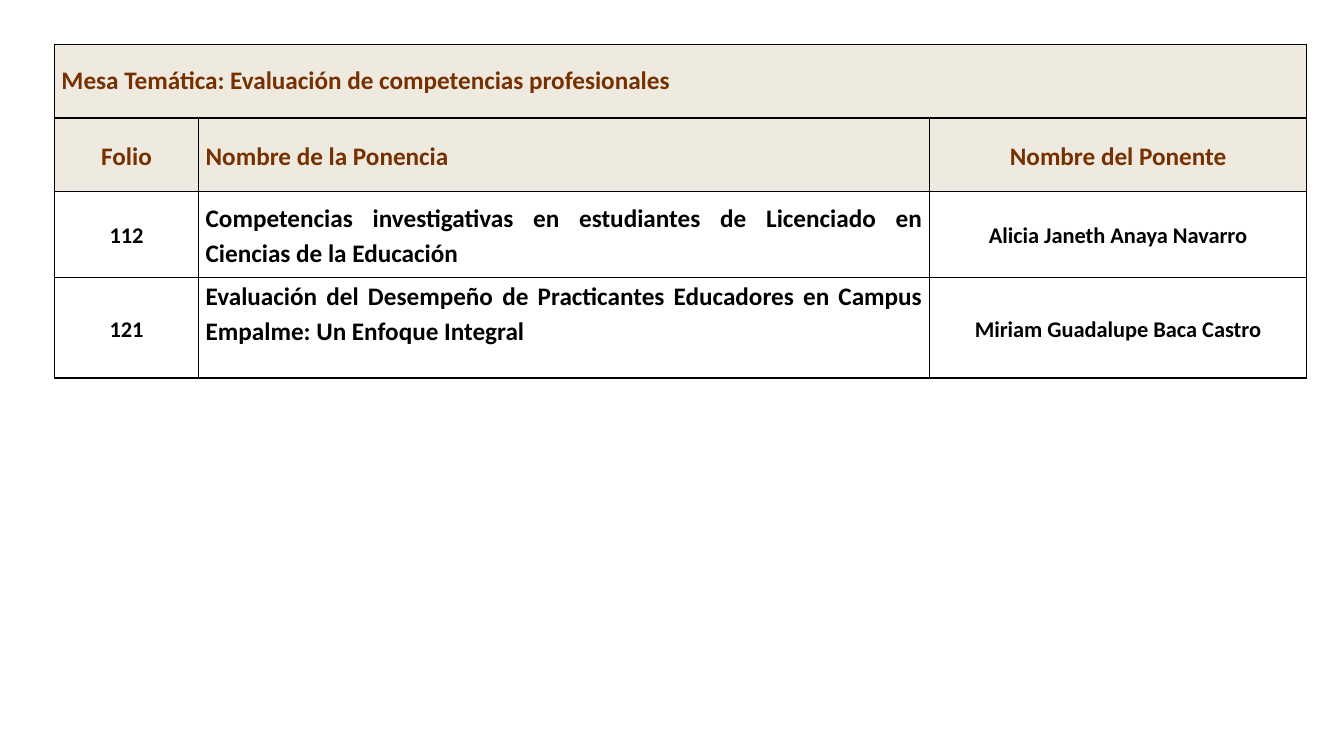
from dataclasses import dataclass

from lxml import etree
from pptx import Presentation
from pptx.dml.color import RGBColor
from pptx.enum.text import MSO_ANCHOR, PP_ALIGN
from pptx.oxml.ns import qn
from pptx.util import Inches, Pt

CENTER, JUSTIFY = PP_ALIGN.CENTER, PP_ALIGN.JUSTIFY
TOP, MIDDLE = MSO_ANCHOR.TOP, MSO_ANCHOR.MIDDLE


@dataclass(frozen=True)
class Theme:
    font: str = "Calibri"
    heading: str = "773000"
    body: str = "000000"
    header_fill: str = "EFEADF"
    border: str = "000000"
    border_width: int = 1
    large: int = 18
    small: int = 16


THEME = Theme()
COLUMN_WIDTHS = [1.43, 7.25, 3.74]
ROW_HEIGHTS = [0.73, 0.73, 0.85, 1.0]
ALIGNMENTS = [CENTER, JUSTIFY, CENTER]
ROWS = [
    ["Mesa Temática: Evaluación de competencias profesionales", "", ""],
    ["Folio", "Nombre de la Ponencia", "Nombre del Ponente"],
    ["112",
     "Competencias investigativas en estudiantes de Licenciado en Ciencias de la Educación",
     "Alicia Janeth Anaya Navarro"],
    ["121",
     "Evaluación del Desempeño de Practicantes Educadores en Campus Empalme: Un Enfoque Integral",
     "Miriam Guadalupe Baca Castro"],
]
HEADER_ROWS = 2
LAST_ROW = len(ROWS) - 1


def add_borders(cell):
    tc_pr = cell._tc.get_or_add_tcPr()
    for position, side in enumerate(("a:lnL", "a:lnR", "a:lnT", "a:lnB")):
        ln = etree.Element(qn(side), w=str(Pt(THEME.border_width)))
        fill = etree.SubElement(ln, qn("a:solidFill"))
        etree.SubElement(fill, qn("a:srgbClr"), val=THEME.border)
        tc_pr.insert(position, ln)


prs = Presentation()
prs.slide_width, prs.slide_height = Inches(13.33), Inches(7.5)
slide = prs.slides.add_slide(prs.slide_layouts[6])

table = slide.shapes.add_table(
    len(ROWS), len(COLUMN_WIDTHS), Inches(0.54), Inches(0.44),
    Inches(sum(COLUMN_WIDTHS)), Inches(sum(ROW_HEIGHTS))).table
for column, width in zip(table.columns, COLUMN_WIDTHS):
    column.width = Inches(width)
for row, height in zip(table.rows, ROW_HEIGHTS):
    row.height = Inches(height)
table.cell(0, 0).merge(table.cell(0, 2))

for i, texts in enumerate(ROWS):
    is_header = i < HEADER_ROWS
    for j, text in enumerate(texts):
        cell = table.cell(i, j)
        if is_header:
            cell.fill.solid()
            cell.fill.fore_color.rgb = RGBColor.from_string(THEME.header_fill)
        else:
            cell.fill.background()
        add_borders(cell)
        if cell.is_spanned:
            continue

        is_talk_title = j == 1 and not is_header
        cell.margin_left = cell.margin_right = Inches(0.07)
        cell.margin_top = cell.margin_bottom = 0
        cell.vertical_anchor = TOP if is_talk_title and i == LAST_ROW else MIDDLE
        p = cell.text_frame.paragraphs[0]
        p.text = text
        p.alignment = JUSTIFY if i == 0 else ALIGNMENTS[j]
        if i > 0:
            p.line_spacing = 1.15 if is_header else 1.14
        font = p.runs[0].font
        font.name = THEME.font
        font.bold = True
        font.size = Pt(THEME.large if is_header or is_talk_title else THEME.small)
        font.color.rgb = RGBColor.from_string(THEME.heading if is_header else THEME.body)

prs.save("out.pptx")
